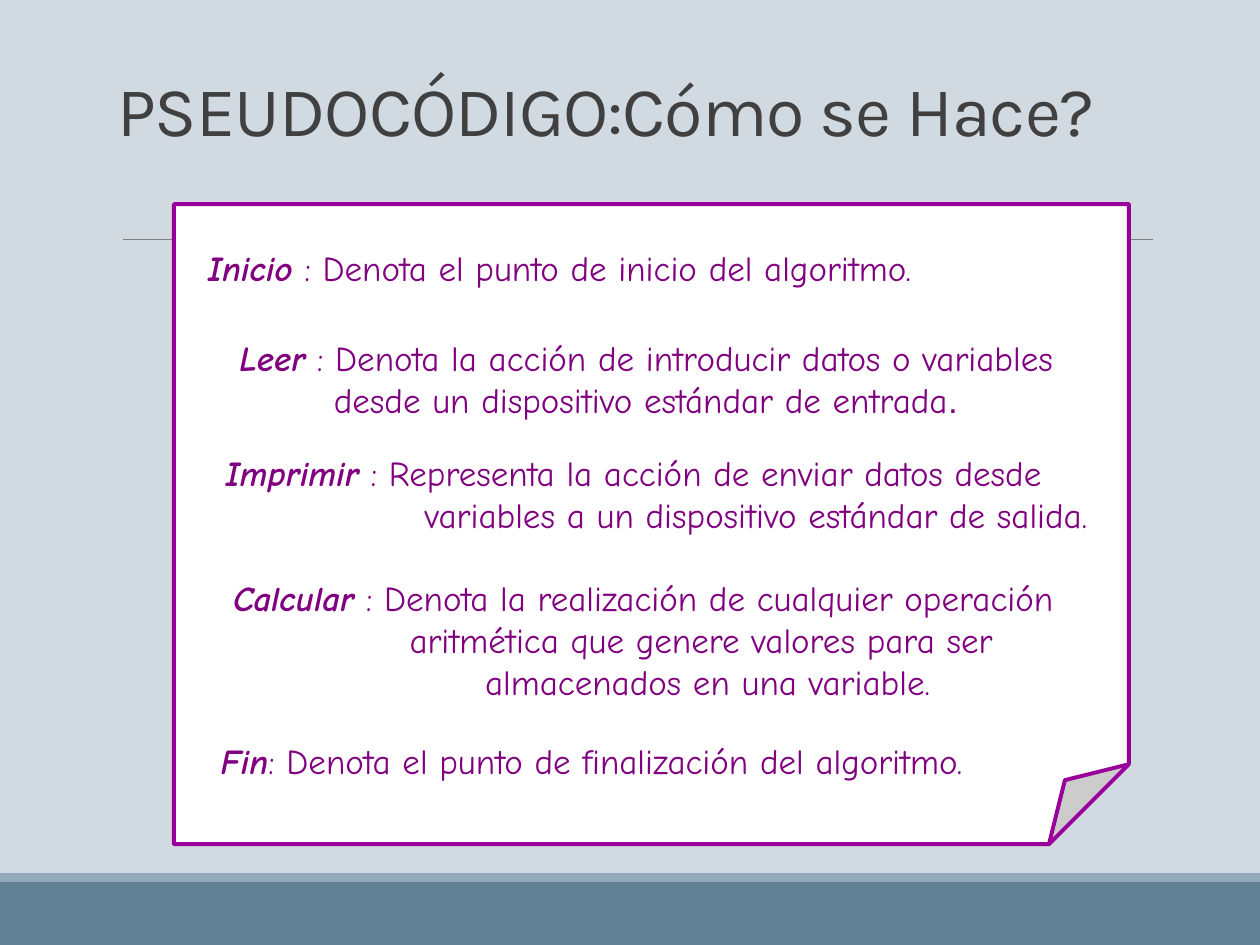
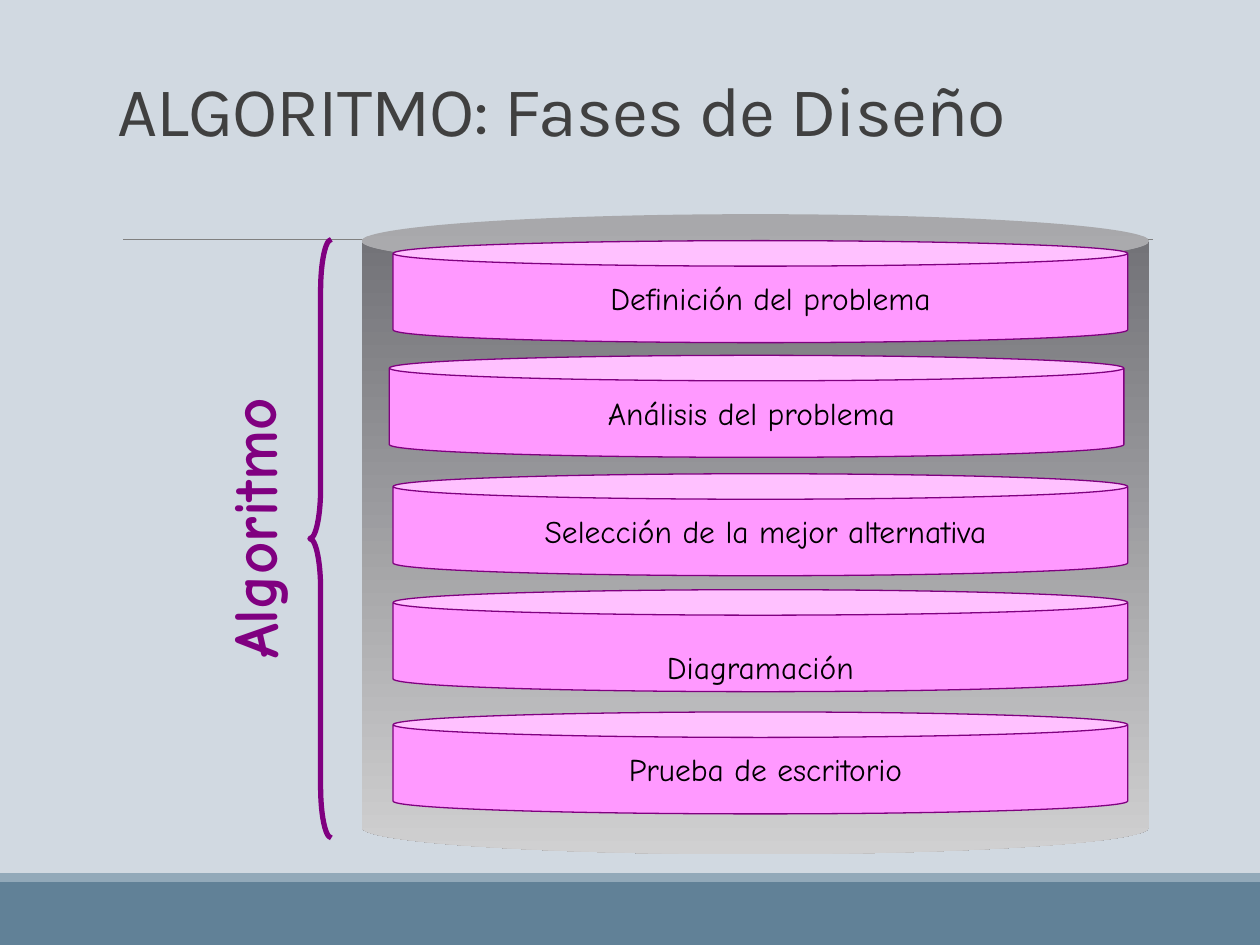
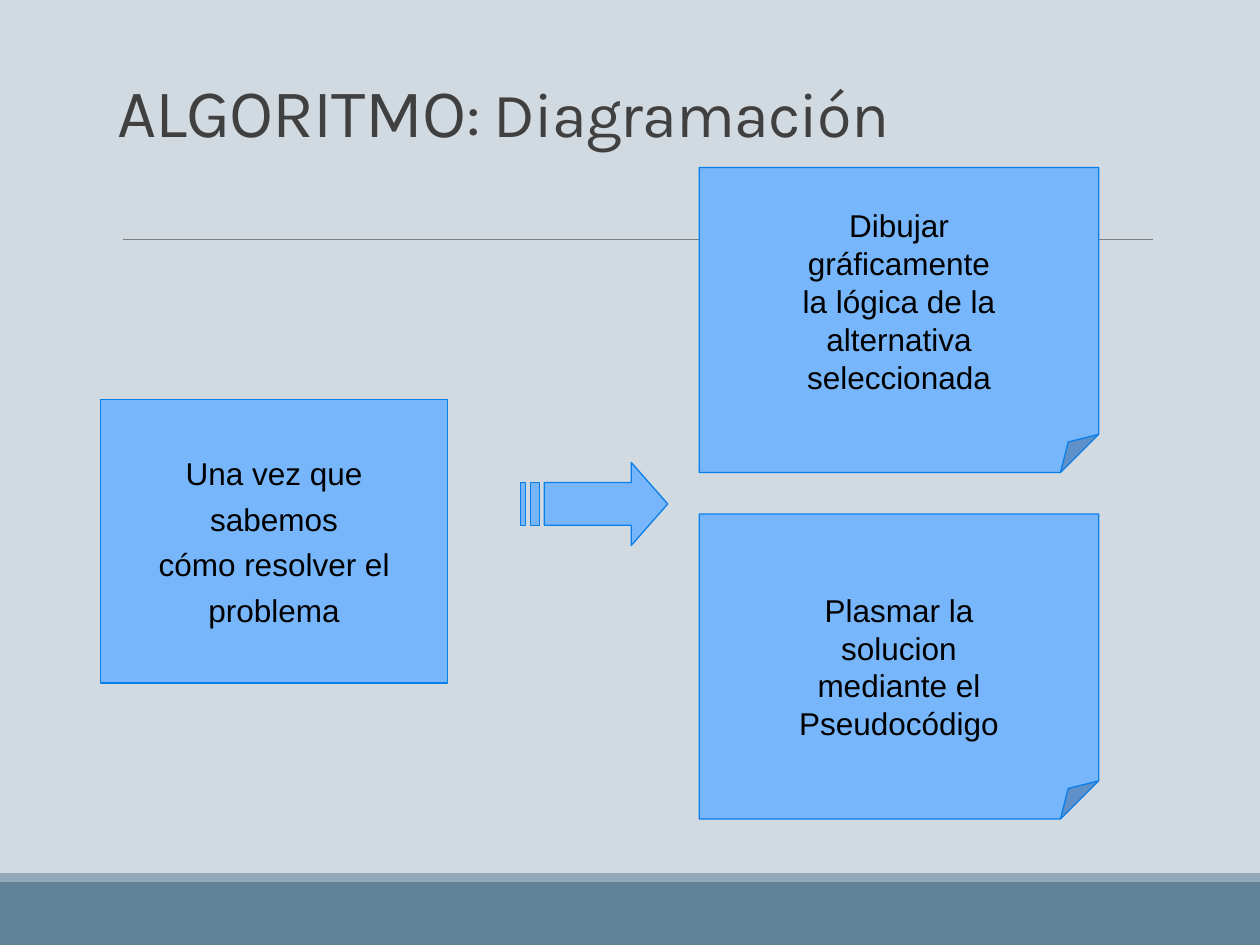
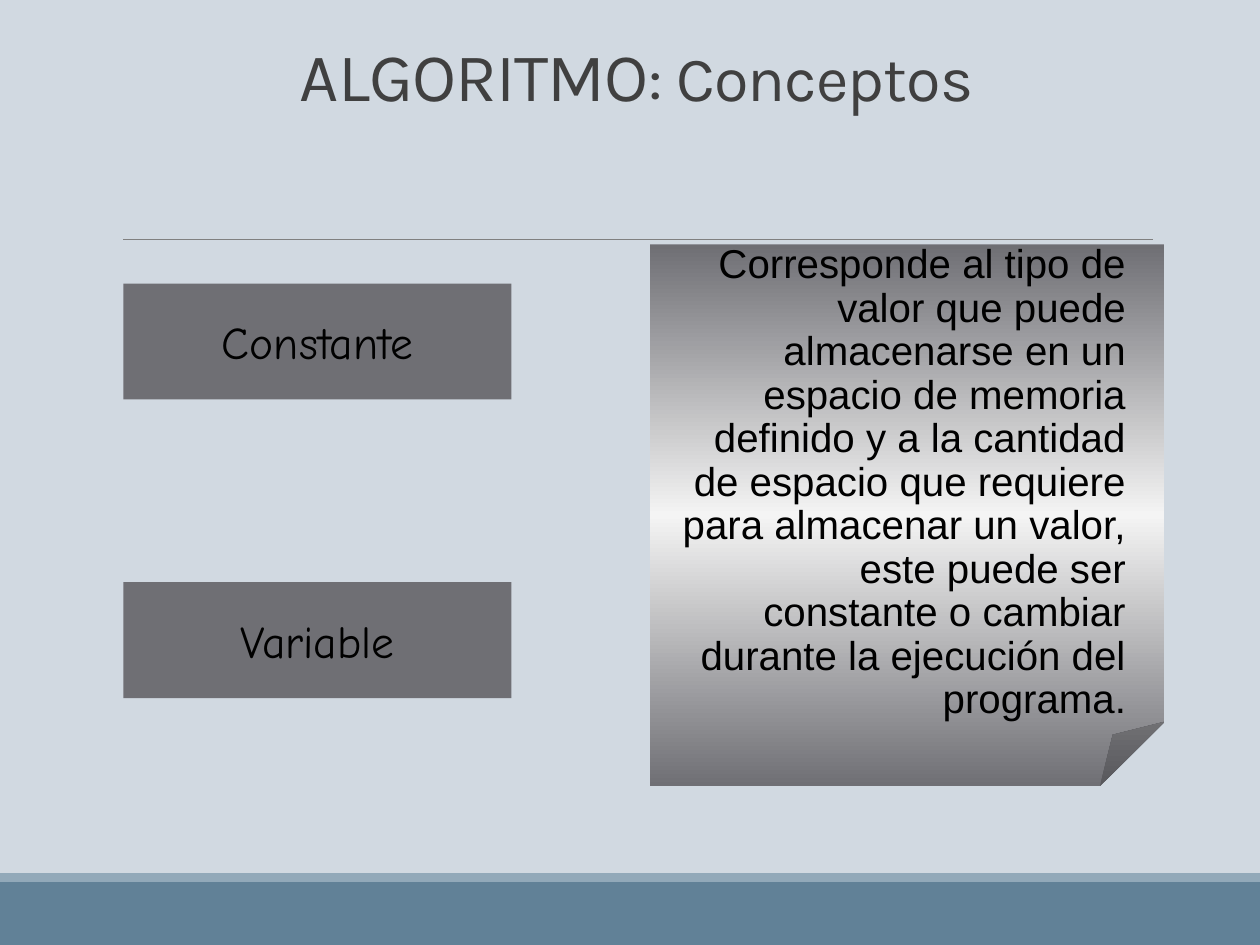
import pptx
import pptx.util
import pptx.dml.color
import pptx.enum.shapes
import pptx.enum.text
import pptx.oxml.ns
from lxml import etree

Inches = pptx.util.Inches
Pt = pptx.util.Pt
MSO = pptx.enum.shapes.MSO_SHAPE
ALIGN = pptx.enum.text.PP_ALIGN
ANCHOR = pptx.enum.text.MSO_ANCHOR
qn = pptx.oxml.ns.qn

BACKGROUND = "D1D9E1"
BAND, BAND_EDGE, RULE = "618197", "92A9B9", "808080"
TITLE_COLOR, BLACK, WHITE = "404040", "000000", "FFFFFF"
PURPLE, NOTE_EDGE = "800080", "990099"
PINK, BLUE, BLUE_EDGE = "FF99FF", "77B6FB", "0B7FE9"
GRAY, GRAY_LIGHT, GRAY_PALE = "6F6F74", "D0D0D1", "F4F4F4"
TITLE_FONT, HAND_FONT, PLAIN_FONT = "Karla", "Comic Neue", "Arial"
TITLE_BOX = (0.83, 0.28, 9.5, 0.97)


def rgb(value):
    return pptx.dml.color.RGBColor.from_string(value)


# Shapes
def place(at):
    return [Inches(v) for v in at]


def paint_gradient(sp, stops):
    """Vertical gradient from (percent, colour) stops, top to bottom."""
    sp.fill.gradient()
    sp.fill.gradient_angle = 270
    gs_list = sp.element.spPr.find(".//" + qn("a:gsLst"))
    for gs in list(gs_list):
        gs_list.remove(gs)
    for percent, color in stops:
        gs = etree.SubElement(gs_list, qn("a:gs"), pos=str(percent * 1000))
        etree.SubElement(gs, qn("a:srgbClr"), val=color)


def style_shape(sp, fill=None, line=None, width=0.75):
    sp.shadow.inherit = False
    if fill is None:
        sp.fill.background()
    elif isinstance(fill, list):
        paint_gradient(sp, fill)
    else:
        sp.fill.solid()
        sp.fill.fore_color.rgb = rgb(fill)
    if line:
        sp.line.color.rgb = rgb(line)
        sp.line.width = Pt(width)
    else:
        sp.line.fill.background()


def adjust(sp, values):
    """Set the shape's guides; some presets list none in python-pptx."""
    geom = sp.element.spPr.find(qn("a:prstGeom"))
    for guides in geom.findall(qn("a:avLst")):
        geom.remove(guides)
    guides = etree.SubElement(geom, qn("a:avLst"))
    for i, value in enumerate(values, 1):
        name = "adj" if len(values) == 1 else f"adj{i}"
        etree.SubElement(guides, qn("a:gd"), name=name,
                         fmla=f"val {round(value * 100000)}")


def add_shape(shapes, kind, at, fill=None, line=None, width=0.75, adj=()):
    sp = shapes.add_shape(kind, *place(at))
    style_shape(sp, fill, line, width)
    if adj:
        adjust(sp, adj)
    return sp


def add_rule(shapes, x1, y, x2):
    line = shapes.add_connector(pptx.enum.shapes.MSO_CONNECTOR.STRAIGHT,
                                *place((x1, y, x2, y)))
    line.line.color.rgb = rgb(RULE)
    line.line.width = Pt(0.5)
    etree.SubElement(line.element.spPr, qn("a:effectLst"))
    return line


# Text
def add_run(p, text, size, font, color=BLACK, strong=False, italic=False):
    r = p.add_run()
    r.text = text
    r.font.size = Pt(size)
    r.font.name = font
    r.font.color.rgb = rgb(color)
    r.font.bold = strong
    r.font.italic = italic
    return r


def set_frame(sp, wrap=True, anchor=ANCHOR.MIDDLE, insets=(0.1, 0.05, 0.1, 0.05)):
    tf = sp.text_frame
    tf.word_wrap = wrap
    tf.auto_size = pptx.enum.text.MSO_AUTO_SIZE.NONE
    tf.vertical_anchor = anchor
    tf.margin_left, tf.margin_top, tf.margin_right, tf.margin_bottom = place(insets)
    return tf


def paragraphs(tf, count, align):
    """Yield the given number of paragraphs, all aligned alike."""
    for i in range(count):
        p = tf.add_paragraph() if i else tf.paragraphs[0]
        p.alignment = align
        yield p


def write_lines(tf, lines, size, font, align=ALIGN.CENTER, before=None, spacing=None):
    for p, text in zip(paragraphs(tf, len(lines), align), lines):
        if before is not None:
            p.space_before = Pt(before)
        if spacing is not None:
            p.line_spacing = spacing
        add_run(p, text, size, font)


# Shared slide frame
def build_layout(prs):
    """Title-only layout with the background, footer bands and rule."""
    fill = prs.slide_master.background.fill
    fill.solid()
    fill.fore_color.rgb = rgb(BACKGROUND)
    return prs.slide_layouts[5]


def add_bands(slide):
    """Draw the bands and rule, then move them into the slide's layout."""
    shapes = slide.shapes
    parts = [add_shape(shapes, MSO.RECTANGLE, (0, 7, 10, 0.5), BAND),
             add_shape(shapes, MSO.RECTANGLE, (0, 6.93, 10, 0.07), BAND_EDGE),
             add_rule(shapes, 0.98, 1.9, 9.15)]
    tree = slide.slide_layout.shapes.element
    for i, part in enumerate(parts):
        tree.insert(2 + i, part.element)


def add_slide(prs, layout, title_runs, at=TITLE_BOX):
    slide = prs.slides.add_slide(layout)
    title = slide.shapes.title
    title.left, title.top, title.width, title.height = place(at)
    tf = set_frame(title, anchor=ANCHOR.BOTTOM)
    p = tf.paragraphs[0]
    p.alignment = ALIGN.LEFT
    p.line_spacing = 0.85
    for text, size in title_runs:
        r = add_run(p, text, size, TITLE_FONT, TITLE_COLOR)
        r._r.get_or_add_rPr().set("spc", "-50")
    return slide


# Slide 1: pseudocode words
def add_definition(shapes, at, term, first_line, more=(), indent=0.1):
    """A term and its meaning; more holds (indent, text) for the next lines."""
    sp = add_shape(shapes, MSO.RECTANGLE, at, WHITE)
    tf = set_frame(sp, insets=(0, 0.05, 0, 0.05))
    rows = [(indent, first_line), *more]
    for i, (p, (left, text)) in enumerate(zip(paragraphs(tf, len(rows), ALIGN.LEFT), rows)):
        p_pr = p._p.get_or_add_pPr()
        p_pr.set("marL", str(Inches(left)))
        p_pr.set("indent", "0")
        if i == 0:
            add_run(p, term, 20, HAND_FONT, PURPLE, True, True)
        add_run(p, text, 20, HAND_FONT, PURPLE)
    return tf


def pseudocode_slide(prs, layout):
    slide = add_slide(prs, layout, [("PSEUDOCÓDIGO:Cómo se Hace?", 40)])
    add_bands(slide)
    shapes = slide.shapes.add_group_shape().shapes
    add_shape(shapes, MSO.FOLDED_CORNER, (1.38, 1.62, 7.58, 5.08),
              WHITE, NOTE_EDGE, 2.25, [0.125])
    add_definition(shapes, (1.4, 1.71, 6.18, 0.83), "Inicio",
                   " : Denota el punto de inicio del algoritmo.", indent=0.25)
    tf = add_definition(shapes, (1.69, 2.55, 6.77, 0.91), "Leer",
                        " : Denota la acción de introducir datos o variables",
                        [(0.96, "desde un dispositivo estándar de entrada")], 0.21)
    add_run(tf.paragraphs[-1], ".", 20, PLAIN_FONT, PURPLE)
    add_definition(shapes, (1.75, 4.45, 6.71, 1.25), "Calcular",
                   " : Denota la realización de cualquier operación",
                   [(1.5, "aritmética que genere valores para ser"),
                    (2.1, "almacenados en una variable.")])
    add_definition(shapes, (1.79, 3.5, 6.9, 0.83), "Imprimir",
                   " : Representa la acción de enviar datos desde",
                   [(1.58, "variables a un dispositivo estándar de salida.")], 0)
    add_definition(shapes, (1.61, 5.62, 6.18, 0.83), "Fin",
                   ": Denota el punto de finalización del algoritmo.", indent=0.14)


# Slide 2: design phases
def add_phase(shapes, left, top, text, shift=0, low=False):
    """A disc with its label, moved sideways by shift or set low in the disc."""
    sp = add_shape(shapes, MSO.CAN, (left, top, 5.83, 0.81), PINK, PURPLE, adj=[0.25])
    insets = (0.1 + max(2 * shift, 0), 0.26 if low else 0.05,
              0.1 + max(-2 * shift, 0), 0 if low else 0.05)
    tf = set_frame(sp, True, ANCHOR.TOP if low else ANCHOR.MIDDLE, insets)
    write_lines(tf, [text], 18, HAND_FONT)


def phases_slide(prs, layout):
    slide = add_slide(prs, layout, [("ALGORITMO: Fases de Diseño", 40)])
    shapes = slide.shapes
    add_shape(shapes, MSO.CAN, (2.87, 1.7, 6.25, 5.08),
              [(0, GRAY), (100, GRAY_LIGHT)], adj=[0.084])
    add_phase(shapes, 3.09, 2.82, "Análisis del problema", -0.04)
    add_phase(shapes, 3.12, 1.91, "Definición del problema", 0.08)
    add_phase(shapes, 3.12, 3.76, "Selección de la mejor alternativa", 0.04)
    add_phase(shapes, 3.12, 4.68, "Diagramación", low=True)
    add_phase(shapes, 3.12, 5.65, "Prueba de escritorio", 0.04)

    label = shapes.add_textbox(*place((0.29, 3.82, 3.42, 0.75)))
    label.rotation = 269.6
    p = set_frame(label).paragraphs[0]
    p.alignment = ALIGN.CENTER
    add_run(p, "Algoritmo", 36, HAND_FONT, PURPLE, True)
    add_shape(shapes, MSO.LEFT_BRACE, (2.46, 1.9, 0.17, 4.75),
              None, PURPLE, 3, [2.375, 0.5])


# Slide 3: diagramming
def add_striped_arrow(shapes):
    outlines = [[(5.01, 3.67), (5.01, 3.83), (4.32, 3.83), (4.32, 4.17),
                 (5.01, 4.17), (5.01, 4.33), (5.3, 4)]]
    for x1, x2 in ((4.21, 4.28), (4.13, 4.17)):
        outlines.append([(x1, 3.83), (x1, 4.17), (x2, 4.17), (x2, 3.83)])
    builder = None
    for outline in outlines:
        start, *rest = [place(point) for point in outline]
        if builder is None:
            builder = shapes.build_freeform(*start)
        else:
            builder.move_to(*start)
        builder.add_line_segments(rest, close=True)
    style_shape(builder.convert_to_shape(), BLUE, BLUE_EDGE)


def add_blue_box(shapes, kind, at, lines, top_inset=0.05, before=None, adj=()):
    sp = add_shape(shapes, kind, at, BLUE, BLUE_EDGE, adj=adj)
    tf = set_frame(sp, False, insets=(0.1, top_inset, 0.1, 0.05))
    write_lines(tf, lines, 18, PLAIN_FONT, before=before)


def diagram_slide(prs, layout):
    slide = add_slide(prs, layout, [("ALGORITMO", 39), (": Diagramación", 36)])
    shapes = slide.shapes
    add_blue_box(shapes, MSO.RECTANGLE, (0.8, 3.17, 2.75, 2.25),
                 ["Una vez que", "sabemos", "cómo resolver el", "problema"], before=4.4)
    add_striped_arrow(shapes)
    add_blue_box(shapes, MSO.FOLDED_CORNER, (5.55, 1.33, 3.17, 2.42),
                 ["Dibujar", "gráficamente", "la lógica de la", "alternativa",
                  "seleccionada"], adj=[0.125])
    add_blue_box(shapes, MSO.FOLDED_CORNER, (5.55, 4.08, 3.17, 2.42),
                 ["Plasmar la", "solucion", "mediante el", "Pseudocódigo"],
                 top_inset=0.35, adj=[0.125])


# Slide 4: concepts
def concepts_slide(prs, layout):
    slide = add_slide(prs, layout, [("ALGORITMO", 39), (": Conceptos", 36)],
                      (2.28, 0, 5.98, 0.97))
    shapes = slide.shapes
    note = add_shape(shapes, MSO.FOLDED_CORNER, (5.16, 1.94, 4.08, 4.3),
                     [(0, GRAY), (50, GRAY_PALE), (100, GRAY)], adj=[0.125])
    tf = set_frame(note, insets=(0.22, 0.05, 0.3, 0.05))
    write_lines(tf, ["Corresponde al tipo de valor que puede almacenarse en un espacio "
                     "de memoria definido y a la cantidad de espacio que requiere para "
                     "almacenar un valor, este puede ser constante o cambiar durante la "
                     "ejecución del programa."], 23, PLAIN_FONT, ALIGN.RIGHT, spacing=0.9)
    for top, name in ((4.62, "Variable"), (2.25, "Constante")):
        sp = add_shape(shapes, MSO.RECTANGLE, (0.98, top, 3.08, 0.92), GRAY)
        write_lines(set_frame(sp), [name], 26, HAND_FONT)


def main():
    prs = pptx.Presentation()
    prs.slide_width, prs.slide_height = place((10, 7.5))
    layout = build_layout(prs)
    pseudocode_slide(prs, layout)
    phases_slide(prs, layout)
    diagram_slide(prs, layout)
    concepts_slide(prs, layout)
    prs.save("out.pptx")


if __name__ == "__main__":
    main()
